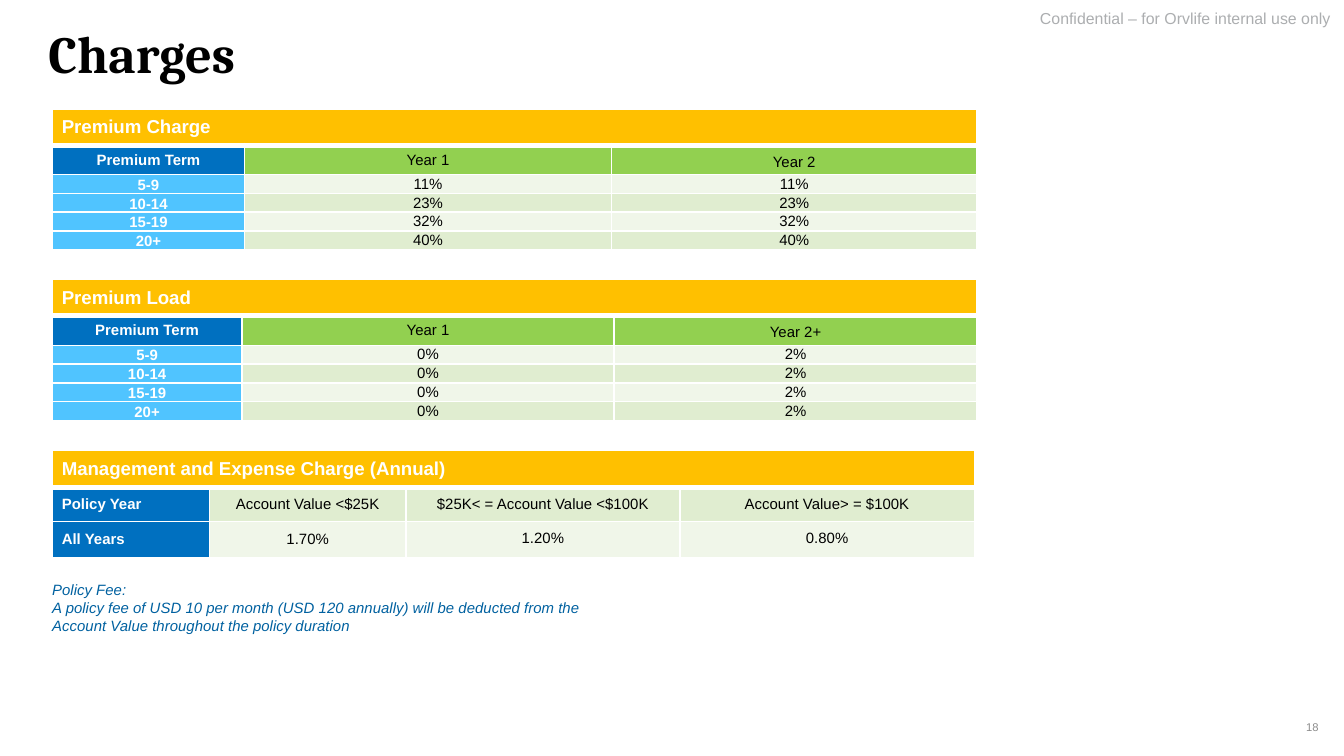
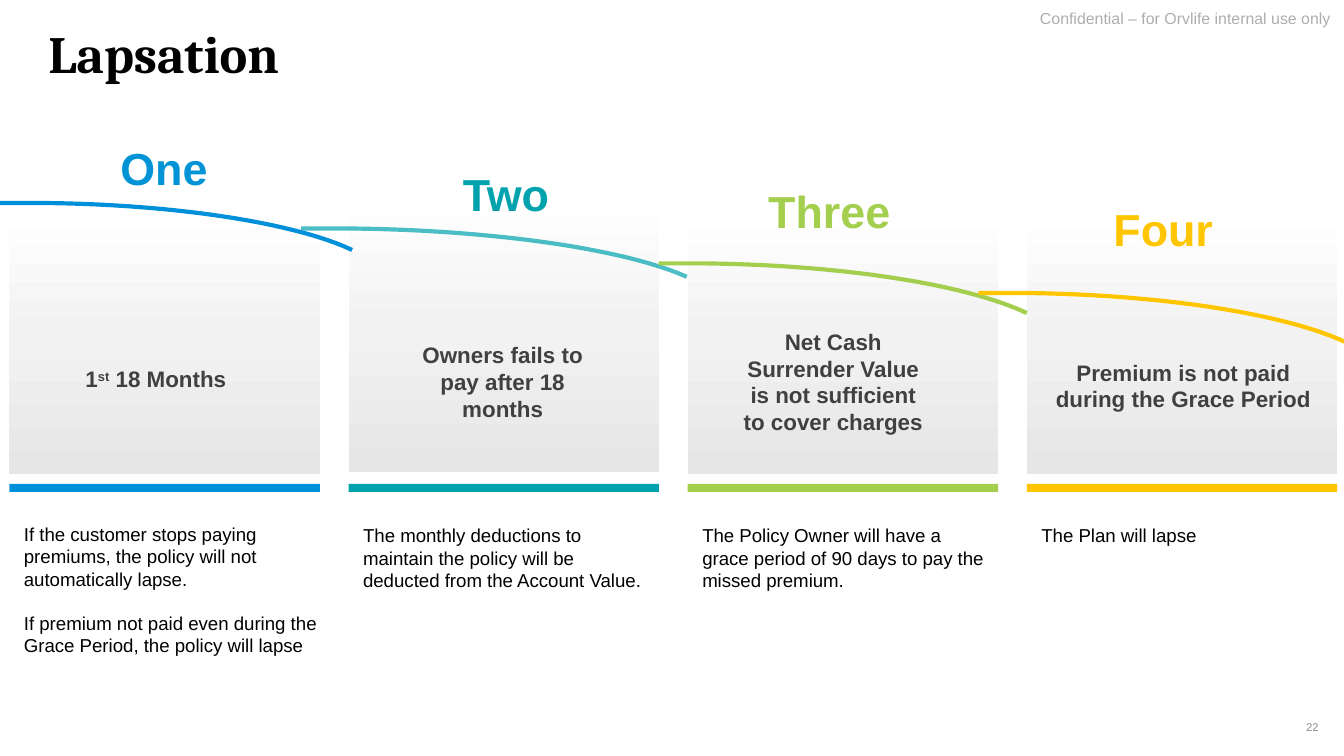
from copy import deepcopy
from dataclasses import dataclass
from typing import Any, NamedTuple

import pptx
import pptx.dml.color
import pptx.enum.shapes
import pptx.enum.text
import pptx.oxml.ns
import pptx.util
from lxml import etree
from pptx.util import Inches

ALIGN = pptx.enum.text.PP_ALIGN
ANCHOR = pptx.enum.text.MSO_ANCHOR
RECT = pptx.enum.shapes.MSO_SHAPE.RECTANGLE
qn = pptx.oxml.ns.qn

HUES = {
    "white": "FFFFFF", "black": "000000", "mist": "F2F2F2", "silver": "E6E6E6",
    "stamp": "ACAEB0", "number": "8C8C8C", "slate": "404040", "navy": "0061A0",
    "amber": "FFC000", "blue": "0070C0", "sky": "50C4FF", "green": "92D050",
    "pale": "F0F6E9", "mint": "E0EDD0",
    "azure": "0090DA", "one": "0093D6", "teal": "00A3AD", "lime": "A3CE4E", "gold": "FFC600",
}


def face(size: float, name: str = "Arial", **extra: bool) -> dict[str, Any]:
    return {"name": name, "size": pptx.util.Pt(size), **extra}


FACES = {
    "stamp": face(8.5),
    "number": face(6),
    "title": face(28, "Cambria", bold=True),
    "band": face(10, bold=True),
    "key": face(8, bold=True),
    "cell": face(8, bold=False),
    "fee": face(8, italic=True),
    "step": face(24, bold=True),
    "task": face(12, bold=True),
    "note": face(10),
}


class Box(NamedTuple):
    left: float
    top: float
    width: float
    height: float


class Pad(NamedTuple):
    side: float
    edge: float


@dataclass
class Grid:
    top: float
    widths: list[float]
    heights: list[float]
    rows: list[tuple[str, ...]]
    terms: bool = True


@dataclass
class Stage:
    name: str
    hue: str
    label: Box
    arc: Box
    task: str
    spot: Box
    notes: list[str]
    base: float = 3.85
    tint: str = ""
    panel: tuple[float, float] = (0.83, 2.7)
    alpha: int = 100


# Shared helpers
def rgb(hue: str) -> pptx.dml.color.RGBColor:
    return pptx.dml.color.RGBColor.from_string(HUES[hue])


def apply(target: Any, values: dict[str, Any]) -> None:
    for name, value in values.items():
        setattr(target, name, value)


def place(box: Box) -> list[int]:
    return [Inches(value) for value in box]


def style(run: Any, kind: str, hue: str) -> None:
    apply(run.font, FACES[kind])
    run.font.color.rgb = rgb(hue)


def write(frame: Any, texts: list[str], kind: str, hue: str, **form: Any) -> None:
    """Fill a frame; '^' marks the bounds of raised text."""
    for index, text in enumerate(texts):
        para = frame.add_paragraph() if index else frame.paragraphs[0]
        apply(para, form)
        if index:
            para.space_before = pptx.util.Pt(11.5)
        for turn, part in enumerate(text.split("^")):
            for line, piece in enumerate(part.split("\n")):
                if line:
                    para.add_line_break()
                run = para.add_run()
                run.text = piece
                style(run, kind, hue)
                if turn % 2:
                    run.font._element.set("baseline", "30000")


def label(slide: Any, box: Box, texts: list[str], kind: str, hue: str,
          pad: Pad = Pad(0.1, 0.05), anchor: Any = ANCHOR.TOP, wrap: bool = True,
          **form: Any) -> None:
    frame = slide.shapes.add_textbox(*place(box)).text_frame
    side, edge = Inches(pad.side), Inches(pad.edge)
    apply(frame, {"margin_left": side, "margin_right": side, "margin_top": edge,
                  "margin_bottom": edge, "word_wrap": wrap, "vertical_anchor": anchor})
    write(frame, texts, kind, hue, **form)


def block(slide: Any, box: Box) -> Any:
    shape = slide.shapes.add_shape(RECT, *place(box))
    shape.shadow.inherit = False
    shape.line.fill.background()
    return shape


def start(deck: Any, title: str, number: str) -> Any:
    slide = deck.slides.add_slide(deck.slide_layouts[6])
    label(slide, Box(6.94, 0.08, 3.06, 0.17), ["Confidential – for Orvlife internal use only"],
          "stamp", "stamp", Pad(0.1, 0), alignment=ALIGN.RIGHT, line_spacing=0.9)
    label(slide, Box(9.14, 5.26, 0.74, 0.3), [number], "number", "number",
          Pad(0.07, 0.04), ANCHOR.MIDDLE, alignment=ALIGN.RIGHT)
    label(slide, Box(0.29, 0.17, 7.59, 0.54), [title], "title", "black",
          Pad(0.07, 0.04), line_spacing=0.9)
    return slide


# Tables
def border(cell: Any, row: int) -> None:
    props = cell._tc.get_or_add_tcPr()
    for side in "LRTB":
        thick = (row, side) in ((0, "B"), (1, "T"))
        line = etree.SubElement(props, qn(f"a:ln{side}"), w=str(pptx.util.Pt(3 if thick else 1)))
        fill = etree.SubElement(line, qn("a:solidFill"))
        etree.SubElement(fill, qn("a:srgbClr"), val=HUES["white"])


def look(grid: Grid, row: int, col: int) -> tuple[str, str, str]:
    """Give the font kind, text colour and fill of a cell."""
    if row == 0:
        return "band", "white", "amber"
    if col == 0:
        return "key", "white", "sky" if grid.terms and row > 1 else "blue"
    if grid.terms and row == 1:
        return "cell", "black", "green"
    return "cell", "black", "mint" if row % 2 else "pale"


def draw_grid(slide: Any, grid: Grid) -> None:
    box = Box(0.39, grid.top, sum(grid.widths), sum(grid.heights))
    table = slide.shapes.add_table(len(grid.heights), len(grid.widths), *place(box)).table
    apply(table, {"first_row": False, "horz_banding": False})
    for col, width in enumerate(grid.widths):
        table.columns[col].width = Inches(width)
    for row, height in enumerate(grid.heights):
        table.rows[row].height = Inches(height)
        for col in range(len(grid.widths)):
            cell = table.cell(row, col)
            kind, hue, fill = look(grid, row, col)
            loose = col > 1 and (row == 1 or row > 1 and not grid.terms)
            low = grid.terms and row > 1 and col == 0
            border(cell, row)
            cell.fill.solid()
            cell.fill.fore_color.rgb = rgb(fill)
            apply(cell, {
                "margin_left": Inches(0.07), "margin_right": Inches(0.07),
                "margin_top": 0, "margin_bottom": 0,
                "vertical_anchor": ANCHOR.TOP if loose else ANCHOR.BOTTOM if low else ANCHOR.MIDDLE,
            })
            left = row == 0 or col == 0 and not grid.terms
            form = {"alignment": ALIGN.LEFT if left else ALIGN.CENTER}
            if loose:
                form["line_spacing"] = 1.5
            text = grid.rows[row][col] if col < len(grid.rows[row]) else ""
            write(cell.text_frame, [text], kind, hue, **form)
    table.cell(0, 0).merge(table.cell(0, len(grid.widths) - 1))


TERMS = ["5-9", "10-14", "15-19", "20+"]
TALL = [0.27, 0.22] + [0.14] * 4
GRIDS = [
    Grid(0.81, [1.43, 2.73, 2.72], TALL,
         [("Premium Charge",), ("Premium Term", "Year 1", "Year 2")]
         + [(term, rate, rate) for term, rate in zip(TERMS, ["11%", "23%", "32%", "40%"])]),
    Grid(2.08, [1.41, 2.77, 2.7], TALL,
         [("Premium Load",), ("Premium Term", "Year 1", "Year 2+")]
         + [(term, "0%", "2%") for term in TERMS]),
    Grid(3.35, [1.17, 1.46, 2.04, 2.19], [0.28, 0.25, 0.27],
         [("Management and Expense Charge (Annual)",),
          ("Policy Year", "Account Value <$25K", "$25K< = Account Value <$100K",
           "Account Value> = $100K"),
          ("All Years", "1.70%", "1.20%", "0.80%")], terms=False),
]


def charges(deck: Any) -> None:
    slide = start(deck, "Charges", "18")
    for grid in GRIDS:
        draw_grid(slide, grid)
    label(slide, Box(0.29, 4.37, 4.43, 0.35),
          ["Policy Fee:\nA policy fee of USD 10 per month (USD 120 annually) will be deducted "
           "from the Account Value throughout the policy duration"],
          "fee", "navy", Pad(0.1, 0), ANCHOR.BOTTOM)


# Lapse stages
LEFT, WIDE, PITCH = 0.07, 2.31, 7.57 / 3
STAGES = [
    Stage("One", "azure", Box(0.89, 1.05, 0.66, 0.4), Box(0, 1.51, 2.62, 0.35),
          "1^st^ 18 Months", Box(0.37, 2.67, 1.58, 0.3),
          ["If the customer stops paying premiums, the policy will not automatically lapse.",
           "If premium not paid even during the Grace Period, the policy will lapse"],
          base=3.84, tint="one"),
    Stage("Two", "teal", Box(3.43, 1.24, 0.67, 0.4), Box(2.24, 1.7, 2.87, 0.36),
          "Owners fails to pay after 18 months", Box(2.95, 2.49, 1.58, 0.71),
          ["The monthly deductions to maintain the policy will be deducted from the Account Value."],
          panel=(0.71, 2.8), alpha=70),
    Stage("Three", "lime", Box(5.71, 1.37, 0.92, 0.4), Box(4.9, 1.96, 2.74, 0.37),
          "Net Cash Surrender Value is not sufficient to cover charges", Box(5.41, 2.39, 1.58, 0.91),
          ["The Policy Owner will have a grace period of 90 days to pay the missed premium."]),
    Stage("Four", "gold", Box(8.28, 1.5, 0.75, 0.4), Box(7.28, 2.18, 2.74, 0.37),
          "Premium is not paid during the Grace Period", Box(7.65, 2.62, 2.31, 0.5),
          ["The Plan will lapse"]),
]


def draw_panel(slide: Any, box: Box) -> None:
    shape = block(slide, box)
    shape.fill.gradient()
    shape.fill.gradient_angle = 270
    stops = shape._element.spPr.find(f".//{qn('a:gsLst')}")
    stops.insert(1, deepcopy(stops[0]))
    shades = [(0.27, "white"), (0.62, "mist"), (1, "silver")]
    for stop, (spot, hue) in zip(shape.fill.gradient_stops, shades):
        stop.position = spot
        stop.color.rgb = rgb(hue)


def draw_arc(slide: Any, stage: Stage, steps: int = 24) -> None:
    """Run flat at first, then fall along a cubic curve."""
    box = stage.arc
    knots = [(0.08, 0), (0.47, 0), (0.83, 0.4), (1, 1)]
    dots = []
    for step in range(steps + 1):
        t = step / steps
        parts = [(1 - t) ** 3, 3 * t * (1 - t) ** 2, 3 * t * t * (1 - t), t ** 3]
        x, y = (sum(part * knot[axis] for part, knot in zip(parts, knots)) for axis in (0, 1))
        dots.append((Inches(box.left + x * box.width), Inches(box.top + y * box.height)))
    pen = slide.shapes.build_freeform(Inches(box.left), Inches(box.top))
    pen.add_line_segments(dots, close=False)
    shape = pen.convert_to_shape()
    shape.shadow.inherit = False
    shape.fill.background()
    shape.line.width = pptx.util.Pt(2.25)
    shape.line.color.rgb = rgb(stage.hue)
    if stage.alpha < 100:
        paint = shape._element.spPr.find(f"{qn('a:ln')}/{qn('a:solidFill')}/{qn('a:srgbClr')}")
        etree.SubElement(paint, qn("a:alpha"), val=str(stage.alpha * 1000))


def lapse(deck: Any) -> None:
    slide = start(deck, "Lapsation", "22")
    for index, stage in enumerate(STAGES):
        top, height = stage.panel
        draw_panel(slide, Box(LEFT + index * PITCH, top, WIDE, height))
    for index in (1, 0, 2, 3):
        draw_arc(slide, STAGES[index])
    for index, stage in enumerate(STAGES):
        left = LEFT + index * PITCH
        bar = block(slide, Box(left, 3.6, WIDE, 0.06))
        bar.fill.solid()
        bar.fill.fore_color.rgb = rgb(stage.hue)
        label(slide, stage.label, [stage.name], "step", stage.tint or stage.hue,
              Pad(0, 0), wrap=False, alignment=ALIGN.CENTER)
        label(slide, stage.spot, [stage.task], "task", "slate", alignment=ALIGN.CENTER)
        width, height = (2.54, 1.11) if len(stage.notes) > 1 else (WIDE, 0.61)
        label(slide, Box(left + 0.01, stage.base, width, height), stage.notes, "note", "black")


def main() -> None:
    deck = pptx.Presentation()
    # Widescreen, 16 to 9
    apply(deck, {"slide_width": Inches(10), "slide_height": Inches(10 * 9 / 16)})
    charges(deck)
    lapse(deck)
    deck.save("out.pptx")


if __name__ == "__main__":
    main()
